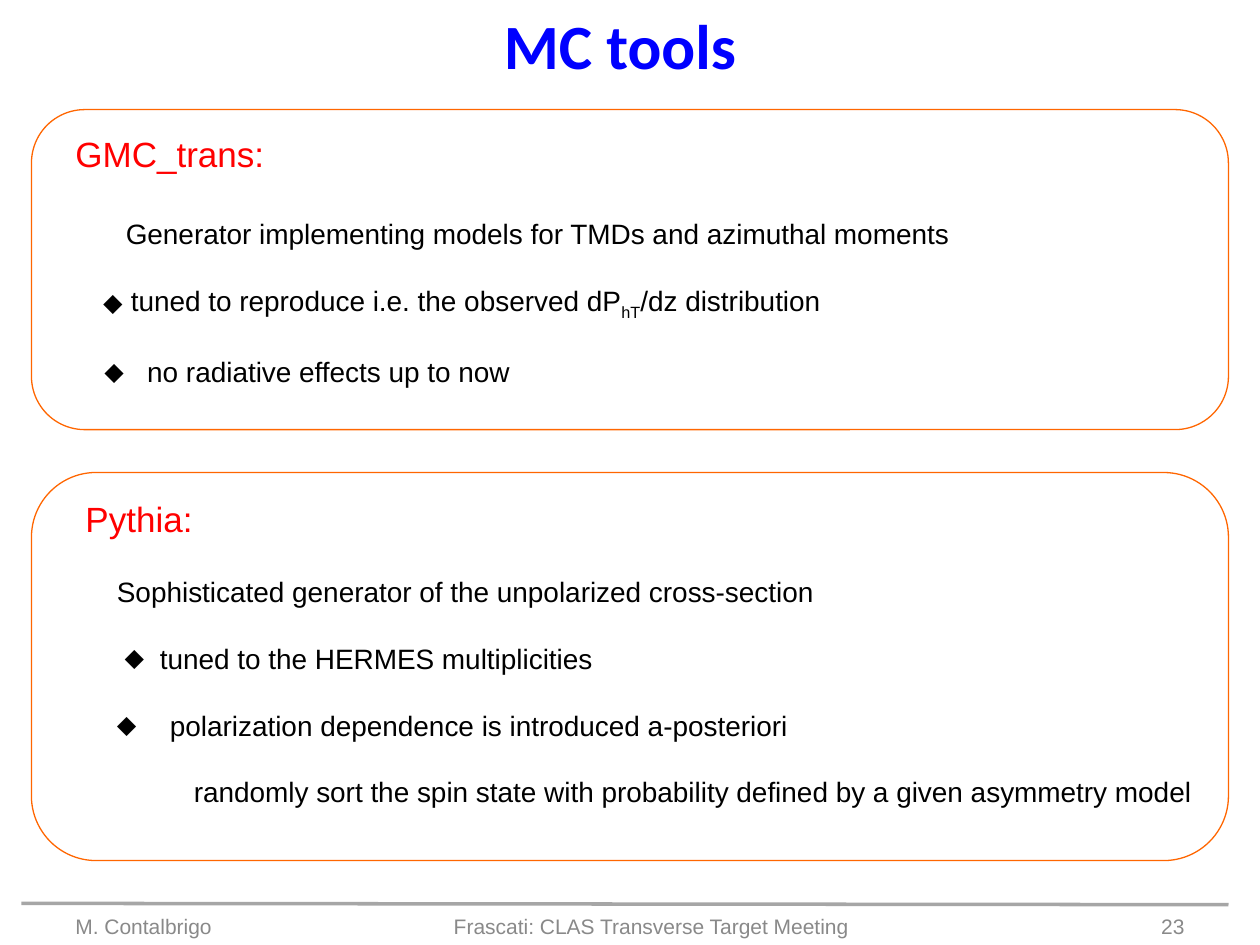
from pptx import Presentation
from pptx.dml.color import RGBColor as Rgb
from pptx.enum.shapes import MSO_CONNECTOR as Conn, MSO_SHAPE as Shape
from pptx.enum.text import MSO_ANCHOR as Anchor, PP_ALIGN as Align
from pptx.oxml.ns import qn
from pptx.util import Inches, Pt
from lxml.etree import SubElement as Sub
from dataclasses import dataclass


@dataclass(frozen=True)
class Theme:
    font: str = "Arial"
    head: str = "Calibri"
    blue: str = "0000FF"
    red: str = "FF0000"
    ink: str = "000000"
    edge: str = "FF6600"
    gray: str = "898989"
    rule: str = "A6A6A6"
    title: int = 36
    label: int = 20
    body: int = 16
    small: int = 12
    gap: int = 19


THEME = Theme()
TITLE = ("MC tools", (3.89, 0, 2.06, 0.71))
PANELS = [
    {
        "frame": (0.25, 0.87, 9.5, 2.54),
        "label": ("GMC_trans:", (0.5, 1, 1.71, 0.44)),
        "box": (0.67, 1.67, 8, 1.65),
        "lines": [
            (["Generator implementing models for TMDs and azimuthal moments"], 0.23, 0),
            (["tuned to reproduce i.e. the observed dP", "hT", "/dz distribution"], 0.27, 0.22),
            (["no radiative effects up to now"], 0.4, 0.34),
        ],
    },
    {
        "frame": (0.25, 3.75, 9.5, 3.08),
        "label": ("Pythia:", (0.58, 3.9, 1.06, 0.44)),
        "box": (0.83, 4.51, 8.83, 2.01),
        "lines": [
            (["Sophisticated generator of the unpolarized cross-section"], 0, 0),
            (["tuned to the HERMES multiplicities"], 0.34, 0.28),
            (["polarization dependence is introduced a-posteriori"], 0.42, 0.42),
            (["randomly sort the spin state with probability defined by a given asymmetry model"], 0.61, 0),
        ],
    },
]
FOOT = [
    ("M. Contalbrigo", (0.5, 7.1, 2.33, 0.4), Align.LEFT),
    ("Frascati: CLAS Transverse Target Meeting", (3.42, 7.1, 3.5, 0.4), Align.CENTER),
    ("23", (7.17, 7.1, 2.33, 0.4), Align.RIGHT),
]
RULE = (0.17, 7.17, 9.75, 7.18)


def place(box):
    return [Inches(v) for v in box]


def style(run, size, color, font=THEME.font, bold=False):
    run.font.name, run.font.size, run.font.bold = font, Pt(size), bold
    run.font.color.rgb = Rgb.from_string(color)


def add_text(slide, text, box, size, color, align=Align.LEFT, wrap=True,
             anchor=Anchor.TOP, font=THEME.font, bold=False):
    frame = slide.shapes.add_textbox(*place(box)).text_frame
    frame.word_wrap, frame.vertical_anchor = wrap, anchor
    frame.text = text
    para = frame.paragraphs[0]
    para.alignment = align
    style(para.runs[0], size, color, font, bold)


def add_body(slide, lines, box):
    frame = slide.shapes.add_textbox(*place(box)).text_frame
    frame.word_wrap = True
    for i, (parts, left, hang) in enumerate(lines):
        para = frame.add_paragraph() if i else frame.paragraphs[0]
        para.space_before = Pt(THEME.gap if i else 0)
        props = para._p.get_or_add_pPr()
        props.set("marL", str(Inches(left)))
        props.set("indent", str(-Inches(hang)))
        if hang:
            Sub(props, qn("a:buFont")).set("typeface", THEME.font)
            Sub(props, qn("a:buChar")).set("char", "⬥")
        for j, part in enumerate(parts):
            run = para.add_run()
            run.text = part
            style(run, THEME.body, THEME.ink)
            if j == 1:
                run.font._element.set("baseline", "-25000")


def add_panel(slide, panel):
    frame = slide.shapes.add_shape(Shape.ROUNDED_RECTANGLE, *place(panel["frame"]))
    frame.shadow.inherit = False
    frame.fill.background()
    frame.line.color.rgb = Rgb.from_string(THEME.edge)
    frame.line.width = Pt(0.75)
    add_text(slide, *panel["label"], THEME.label, THEME.red, wrap=False)
    add_body(slide, panel["lines"], panel["box"])


def main():
    """Build the MC tools slide."""
    deck = Presentation()
    deck.slide_width, deck.slide_height = Inches(10), Inches(7.5)
    slide = deck.slides.add_slide(deck.slide_layouts[6])
    for text, box, align in FOOT:
        add_text(slide, text, box, THEME.small, THEME.gray, align, anchor=Anchor.BOTTOM)
    rule = slide.shapes.add_connector(Conn.STRAIGHT, *place(RULE))
    rule.line.color.rgb = Rgb.from_string(THEME.rule)
    rule.line.width = Pt(2)
    Sub(rule._element.spPr, qn("a:effectLst"))
    add_text(slide, *TITLE, THEME.title, THEME.blue, Align.CENTER, wrap=False,
             font=THEME.head, bold=True)
    for panel in PANELS:
        add_panel(slide, panel)
    deck.save("out.pptx")


if __name__ == "__main__":
    main()
